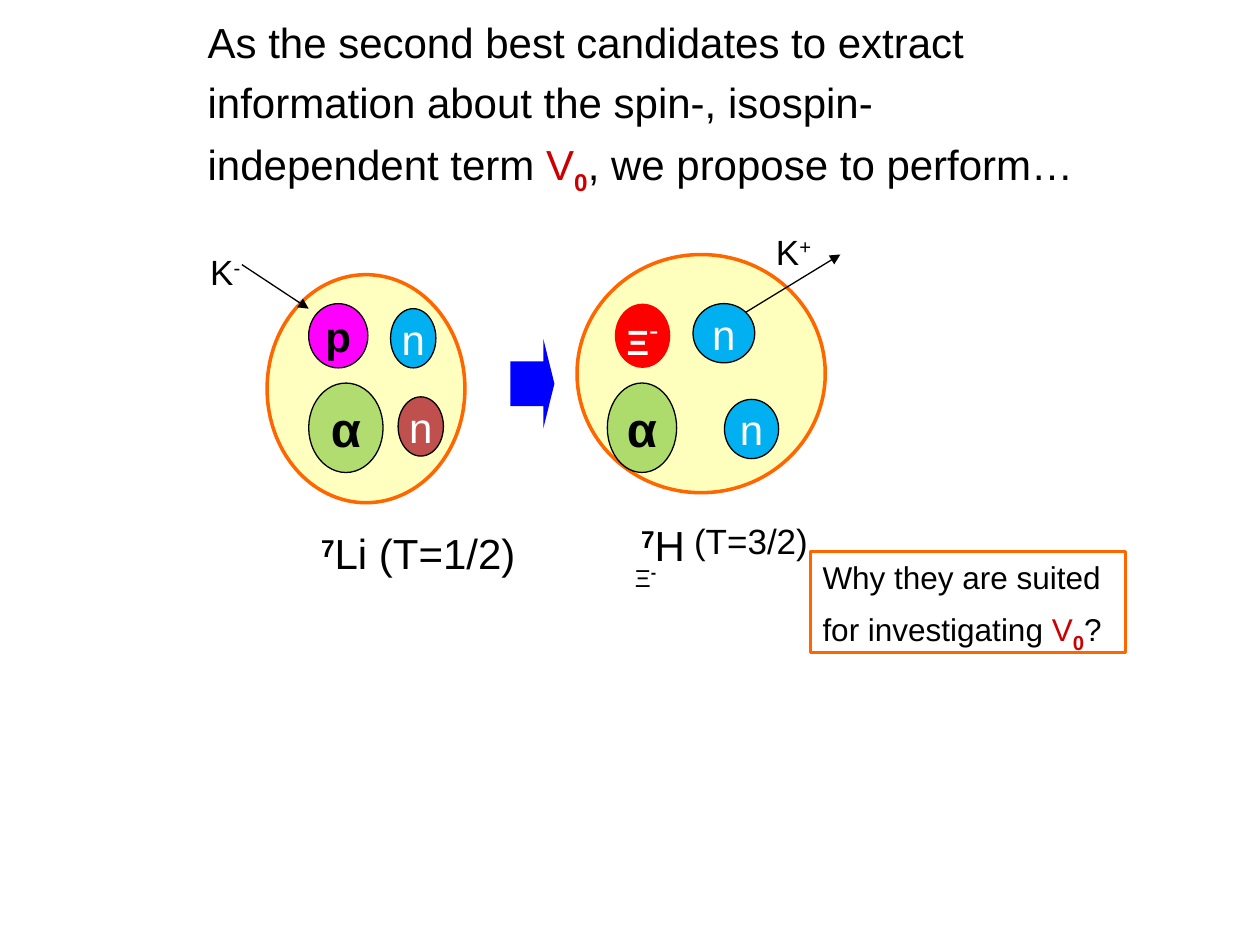
import pptx
import pptx.util
import pptx.dml.color
import pptx.enum.shapes
import pptx.enum.text
import pptx.oxml
import pptx.oxml.ns

Inches, Pt = pptx.util.Inches, pptx.util.Pt
SHAPE = pptx.enum.shapes.MSO_SHAPE
ANCHOR = pptx.enum.text.MSO_ANCHOR
ALIGN = pptx.enum.text.PP_ALIGN
FIT = pptx.enum.text.MSO_AUTO_SIZE
BLACK, WHITE, RED, ORANGE = "000000", "FFFFFF", "CC0000", "FF6600"
BLUE, GREEN, YELLOW = "00B0F0", "92D050", "FFFF00"

# Runs: text, size, colour, bold, baseline in percent
V0 = [("V", 24, RED, False, 0), ("0", 24, RED, True, -25)]
NEUTRON = [("n", 24, WHITE, False, 0)]
ALPHA = [("α", 28, BLACK, True, 0)]
PROTON = [("p", 24, BLACK, True, 0)]
XI = [("Ξ", 20, WHITE, True, 0), ("-", 28, WHITE, False, 30)]

INTRO = [("As the second best candidates to extract information about the spin-, "
          "isospin-independent term ", 24, BLACK, False, 0), *V0,
         (", we propose to perform…", 24, BLACK, False, 0)]
QUESTION = [
    [("Why they are suited", 18, BLACK, False, 0)],
    [("for investigating ", 18, BLACK, False, 0), ("V", 18, RED, False, 0),
     ("0", 20, RED, True, -25), ("?", 18, BLACK, False, 0)],
]

# Box, opacity in percent
NUCLEI = [((4.58, 2.02, 1.97, 1.89), 26), ((2.12, 2.18, 1.57, 1.81), 25)]

# Box, runs, fill, opacity in percent, outline
PARTICLES = [
    ((2.45, 3.04, 0.59, 0.71), ALPHA, GREEN, 71, BLACK),
    ((2.45, 2.41, 0.47, 0.51), PROTON, "FF00FF", 100, BLACK),
    ((3.1, 2.45, 0.36, 0.47), NEUTRON, BLUE, 100, BLACK),
    ((3.16, 3.15, 0.36, 0.47), NEUTRON, "C0504D", 100, BLACK),
    ((4.82, 3.04, 0.55, 0.71), ALPHA, GREEN, 74, BLACK),
    ((4.88, 2.41, 0.44, 0.51), XI, "FF0000", 100, None),
    ((5.5, 2.41, 0.49, 0.47), NEUTRON, BLUE, 100, BLACK),
    ((5.75, 3.17, 0.43, 0.47), NEUTRON, BLUE, 100, BLACK),
]
KAON_PATHS = [(5.9, 2.49, 6.67, 2.02), (1.92, 2.1, 2.45, 2.45)]
LABELS = [
    ((1.57, 1.94, 0.45, 0.44), [("K", 20, BLACK, False, 0), ("-", 20, BLACK, False, 30)]),
    ((6.06, 1.78, 0.5, 0.44), [("K", 20, BLACK, False, 0), ("+", 20, BLACK, False, 30)]),
    ((4.99, 4.07, 0.57, 0.51), [("7", 24, BLACK, True, 30), ("H", 24, BLACK, False, 0)]),
    ((4.94, 4.39, 0.38, 0.34), [("Ξ", 14, BLACK, False, 0), ("-", 16, BLACK, True, 30)]),
    ((2.45, 4.14, 1.78, 0.51), [("7", 24, BLACK, True, 30),
                                ("Li (T=1/2)", 24, BLACK, False, 0)]),
    ((5.41, 4.07, 1.11, 0.44), [("(T=3/2)", 20, BLACK, False, 0)]),
]

GROWING = {"word_wrap": False, "auto_size": FIT.SHAPE_TO_FIT_TEXT,
           "vertical_anchor": ANCHOR.TOP}
WRAPPED = {**GROWING, "word_wrap": True}
CENTRED = {"word_wrap": False, "vertical_anchor": ANCHOR.MIDDLE}


def rgb(code):
    return pptx.dml.color.RGBColor.from_string(code)


def add_xml(parent, tag, **attributes):
    child = pptx.oxml.parse_xml(f"<a:{tag} {pptx.oxml.ns.nsdecls('a')}/>")
    for name, value in attributes.items():
        child.set(name, str(value))
    parent.append(child)
    return child


def apply(target, values):
    for name, value in values.items():
        setattr(target, name, value)


def write(shape, paragraphs, frame_format, **paragraph_format):
    frame = shape.text_frame
    apply(frame, frame_format)
    for index, runs in enumerate(paragraphs):
        paragraph = frame.add_paragraph() if index else frame.paragraphs[0]
        apply(paragraph, paragraph_format)
        for text, size, color, bold, baseline in runs:
            run = paragraph.add_run()
            run.text = text
            apply(run.font, {"name": "Arial", "size": Pt(size), "bold": bold})
            run.font.color.rgb = rgb(color)
            if baseline:
                run.font._element.set("baseline", str(baseline * 1000))


def add_figure(kind, box, fill=None, opacity=100, line=None, width=0.75):
    figure = slide.shapes.add_shape(kind, *map(Inches, box))
    figure.shadow.inherit = False
    if fill:
        figure.fill.solid()
        figure.fill.fore_color.rgb = rgb(fill)
        if opacity < 100:
            color = figure.fill._xPr.find(".//" + pptx.oxml.ns.qn("a:srgbClr"))
            add_xml(color, "alpha", val=opacity * 1000)
    else:
        figure.fill.background()
    if line:
        figure.line.color.rgb = rgb(line)
        figure.line.width = Pt(width)
    else:
        figure.line.fill.background()
    return figure


def add_label(box, runs, frame_format=GROWING, **paragraph_format):
    label = slide.shapes.add_textbox(*map(Inches, box))
    write(label, [runs], frame_format, **paragraph_format)


deck = pptx.Presentation()
deck.slide_width, deck.slide_height = Inches(10), Inches(7.5)
slide = deck.slides.add_slide(deck.slide_layouts[6])

# Introduction
add_label((1.55, 0, 7.2, 1.56), INTRO, WRAPPED, line_spacing=1.2)

# Nuclei before and after the reaction
for box, opacity in NUCLEI:
    add_figure(SHAPE.OVAL, box, YELLOW, opacity, ORANGE, 2)
reaction = add_figure(SHAPE.RIGHT_ARROW, (4.05, 2.69, 0.35, 0.71), "0000FF")
reaction.adjustments[0], reaction.adjustments[1] = 0.5, 0.25

# Incoming and outgoing kaons
for ends in KAON_PATHS:
    kaon = slide.shapes.add_connector(pptx.enum.shapes.MSO_CONNECTOR.STRAIGHT,
                                      *map(Inches, ends))
    kaon.line.color.rgb = rgb(BLACK)
    kaon.line.width = Pt(0.75)
    add_xml(kaon.line._get_or_add_ln(), "tailEnd", type="triangle")
    add_xml(kaon._element.spPr, "effectLst")

# Particles inside the nuclei
for box, runs, fill, opacity, outline in PARTICLES:
    particle = add_figure(SHAPE.OVAL, box, fill, opacity, outline)
    write(particle, [runs], CENTRED, alignment=ALIGN.CENTER)

# Names of kaons and nuclei
for box, runs in LABELS:
    add_label(box, runs)

# Closing question, spaced by 30 percent of a line
question = add_figure(SHAPE.RECTANGLE, (6.43, 4.38, 2.5, 0.8), line=ORANGE, width=1.75)
write(question, QUESTION, GROWING, alignment=ALIGN.LEFT)
for paragraph in question.text_frame.paragraphs:
    spacing = add_xml(paragraph._p.get_or_add_pPr(), "spcBef")
    add_xml(spacing, "spcPct", val=30000)

deck.save("out.pptx")
